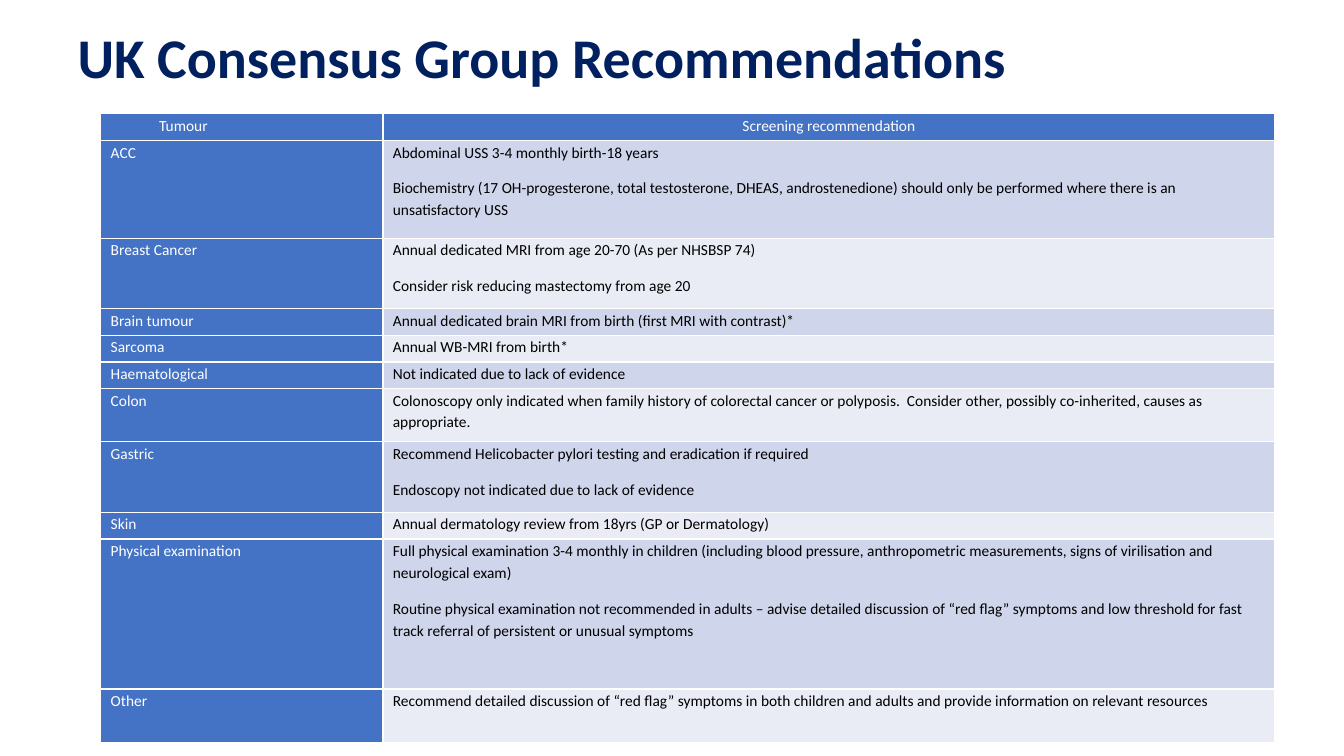
from lxml import etree
from pptx import Presentation
from pptx import util as u
from pptx.dml import color
from pptx.enum import text
from pptx.oxml import ns

HEADING = "UK Consensus Group Recommendations"
HEADERS = ("Tumour", "Screening recommendation")
HEADER_HEIGHT = 0.67
# tumour, recommendations, row height in cm
SCREENING = [
    ("ACC", ["Abdominal USS 3-4 monthly birth-18 years",
             "Biochemistry (17 OH-progesterone, total testosterone, DHEAS, androstenedione) "
             "should only be performed where there is an unsatisfactory USS"], 2.46),
    ("Breast Cancer", ["Annual dedicated MRI from age 20-70 (As per NHSBSP 74)",
                       "Consider risk reducing mastectomy from age 20"], 1.78),
    ("Brain tumour", ["Annual dedicated brain MRI from birth (first MRI with contrast)*"], 0.67),
    ("Sarcoma", ["Annual WB-MRI from birth*"], 0.67),
    ("Haematological", ["Not indicated due to lack of evidence"], 0.67),
    ("Colon", ["Colonoscopy only indicated when family history of colorectal cancer or polyposis.  "
               "Consider other, possibly co-inherited, causes as appropriate."], 1.34),
    ("Gastric", ["Recommend Helicobacter pylori testing and eradication if required",
                 "Endoscopy not indicated due to lack of evidence"], 1.78),
    ("Skin", ["Annual dermatology review from 18yrs (GP or Dermatology)"], 0.67),
    ("Physical examination", [
        "Full physical examination 3-4 monthly in children (including blood pressure, "
        "anthropometric measurements, signs of virilisation and neurological exam)",
        "Routine physical examination not recommended in adults – advise detailed discussion of "
        "“red flag” symptoms and low threshold for fast track referral of persistent or unusual "
        "symptoms"], 3.78),
    ("Other", ["Recommend detailed discussion of “red flag” symptoms in both children and adults "
               "and provide information on relevant resources"], 1.34),
]
COLUMN_WIDTHS = (7.11, 22.48)
BLUE, NAVY, WHITE, BLACK = "4472C4", "002060", "FFFFFF", "000000"
BANDS = ("CFD5EA", "E9EBF5")

CELL_MARGINS = {"margin_left": u.Cm(0.25), "margin_right": u.Cm(0.25),
                "margin_top": 0, "margin_bottom": 0}
CELL_PARAGRAPH = {"line_spacing": 1.15, "space_after": u.Pt(10)}
CELL_FONT = {"name": "Calibri", "size": u.Pt(11), "bold": False}
TITLE_BOX = {"left": u.Cm(1.7), "top": u.Cm(-0.08), "width": u.Cm(30.48), "height": u.Cm(3.18)}
TITLE_FRAME = {"word_wrap": True, "auto_size": text.MSO_AUTO_SIZE.NONE,
               "vertical_anchor": text.MSO_ANCHOR.MIDDLE}
TITLE_PARAGRAPH = {"alignment": text.PP_ALIGN.LEFT, "line_spacing": 0.9}
TITLE_FONT = {"name": "Calibri", "size": u.Pt(40), "bold": True}


def apply(target, values):
    for key, value in values.items():
        setattr(target, key, value)


def rgb(value):
    return color.RGBColor.from_string(value)


def add_borders(cell):
    properties = cell._tc.get_or_add_tcPr()
    for position, side in enumerate(("a:lnL", "a:lnR", "a:lnT", "a:lnB")):
        border = etree.Element(ns.qn(side), w=str(u.Pt(1)))
        fill = etree.SubElement(border, ns.qn("a:solidFill"))
        etree.SubElement(fill, ns.qn("a:srgbClr"), val=WHITE)
        properties.insert(position, border)


def fill_cell(cell, lines, background, ink):
    apply(cell, CELL_MARGINS)
    cell.fill.solid()
    cell.fill.fore_color.rgb = rgb(background)
    add_borders(cell)
    cell.text = "\n".join(lines)
    for paragraph in cell.text_frame.paragraphs:
        apply(paragraph, CELL_PARAGRAPH)
        for run in paragraph.runs:
            apply(run.font, CELL_FONT)
            run.font.color.rgb = rgb(ink)


def main():
    deck = Presentation()
    apply(deck, {"slide_width": u.Cm(33.87), "slide_height": u.Cm(19.05)})
    slide = deck.slides.add_slide(deck.slide_layouts[5])

    # Screening table
    heights = [HEADER_HEIGHT] + [height for _, _, height in SCREENING]
    table = slide.shapes.add_table(
        len(heights), len(COLUMN_WIDTHS), u.Cm(2.54), u.Cm(2.87),
        u.Cm(sum(COLUMN_WIDTHS)), u.Cm(sum(heights))).table
    for column, width in zip(table.columns, COLUMN_WIDTHS):
        column.width = u.Cm(width)
    for row, height in zip(table.rows, heights):
        row.height = u.Cm(height)

    # Header row
    for index, header in enumerate(HEADERS):
        fill_cell(table.cell(0, index), [header], BLUE, WHITE)
    table.cell(0, 0).margin_left = u.Cm(1.47)
    table.cell(0, 1).text_frame.paragraphs[0].alignment = text.PP_ALIGN.CENTER

    # Tumour rows with alternating bands
    for index, (tumour, advice, _) in enumerate(SCREENING):
        fill_cell(table.cell(index + 1, 0), [tumour], BLUE, WHITE)
        fill_cell(table.cell(index + 1, 1), advice, BANDS[index % 2], BLACK)

    # Title
    title = slide.shapes.title
    apply(title, TITLE_BOX)
    title.text_frame.text = HEADING
    apply(title.text_frame, TITLE_FRAME)
    paragraph = title.text_frame.paragraphs[0]
    apply(paragraph, TITLE_PARAGRAPH)
    heading_font = paragraph.runs[0].font
    apply(heading_font, TITLE_FONT)
    heading_font.color.rgb = rgb(NAVY)

    deck.save("out.pptx")


if __name__ == "__main__":
    main()
